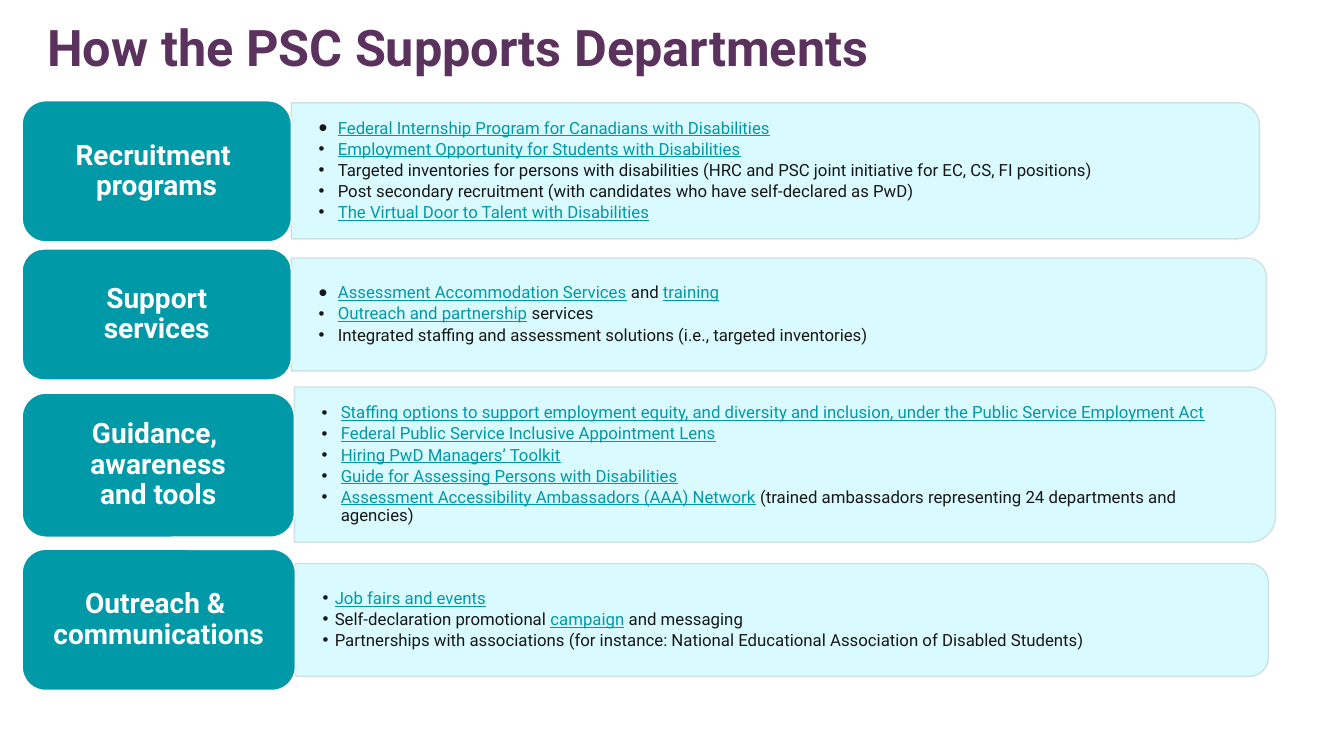
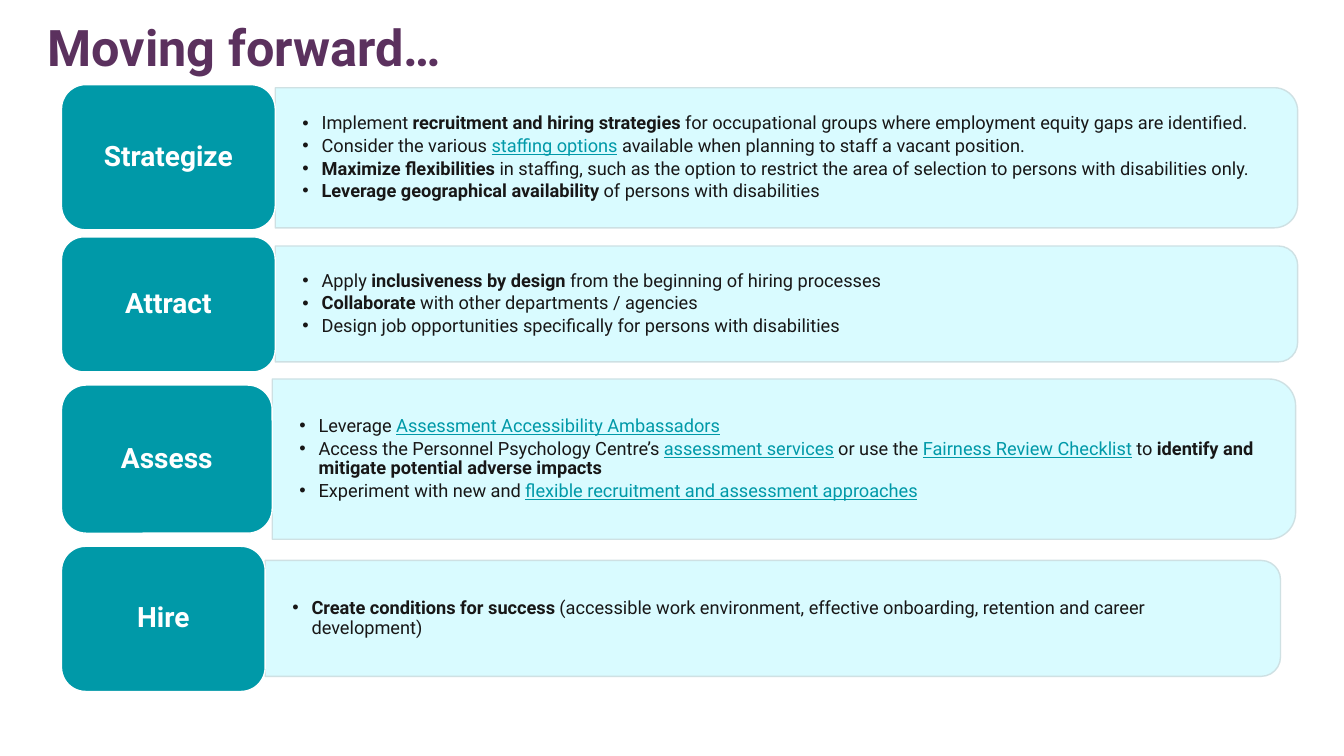
from dataclasses import dataclass
from typing import NamedTuple

from lxml import etree
from pptx import Presentation
from pptx.dml.color import RGBColor
from pptx.enum.shapes import MSO_SHAPE
from pptx.enum.text import MSO_ANCHOR, MSO_AUTO_SIZE, PP_ALIGN
from pptx.oxml.ns import qn
from pptx.util import Pt

PX = 9144  # EMU per px, 100 px to the inch
ROUND_RECT = MSO_SHAPE.ROUNDED_RECTANGLE
ROUND_TOP = MSO_SHAPE.ROUND_2_SAME_RECTANGLE
MIDDLE = MSO_ANCHOR.MIDDLE
CENTER, LEFT = PP_ALIGN.CENTER, PP_ALIGN.LEFT
NO_AUTOFIT = MSO_AUTO_SIZE.NONE
TITLE_ONLY = 5

FONT = "Roboto"
PURPLE, TEAL, PALE = "5B315E", "0099A8", "D5FBFF"
EDGE, INK, WHITE = "CCDEE1", "181717", "FFFFFF"
LINE_SPACING = 0.9
BULLET_GAP = Pt(2.1)


class Span(NamedTuple):
    text: str
    bold: bool = False
    link: bool = False


def bold(text):
    return Span(text, bold=True)


def link(text):
    return Span(text, link=True)


@dataclass
class Section:
    """One row: a card from the slide's card edge to split, a panel from split to right."""
    label: str
    card_top: int
    card_height: int
    split: int
    right: int
    panel_top: int
    panel_height: int
    bullets: list
    indent: int = 19
    big_first_bullet: bool = False


SUPPORT = [
    Section("Recruitment \vprograms", 100, 140, 289, 1249, 102, 135, [
        [link("Federal Internship Program for Canadians with Disabilities")],
        [link("Employment Opportunity for Students with Disabilities")],
        ["Targeted inventories for persons with disabilities "
         "(HRC and PSC joint initiative for EC, CS, FI positions)"],
        ["Post secondary recruitment (with candidates who have self-declared as PwD)"],
        [link("The Virtual Door to Talent with Disabilities")],
    ], big_first_bullet=True),
    Section("Support\vservices", 247, 130, 289, 1256, 256, 112, [
        [link("Assessment Accommodation Services"), " and ", link("training")],
        [link("Outreach and partnership"), " services"],
        ["Integrated staffing and assessment solutions (i.e., targeted inventories)"],
    ], big_first_bullet=True),
    Section("Guidance, \vawareness\vand tools", 390, 143, 292, 1265, 384, 154, [
        [link("Staffing options to support employment equity, and diversity and inclusion, "
              "under the Public Service Employment Act")],
        [link("Federal Public Service Inclusive Appointment Lens")],
        [link("Hiring PwD Managers’ Toolkit")],
        [link("Guide for Assessing Persons with Disabilities")],
        [link("Assessment Accessibility Ambassadors (AAA) Network"),
         " (trained ambassadors representing 24 departments and agencies)"],
    ]),
    Section("Outreach & \vcommunications", 545, 140, 293, 1258, 559, 112, [
        [link("Job fairs and events")],
        ["Self-declaration promotional ", link("campaign"), " and messaging"],
        ["Partnerships with associations "
         "(for instance: National Educational Association of Disabled Students)"],
    ], indent=12),
]

FORWARD = [
    Section("Strategize", 84, 144, 273, 1287, 87, 139, [
        ["Implement ", bold("recruitment and hiring strategies "),
         "for occupational groups where employment equity gaps are identified."],
        ["Consider the various ", link("staffing options"),
         " available when planning to staff a vacant position."],
        [bold("Maximize flexibilities "),
         "in staffing, such as the option to restrict the area of selection "
         "to persons with disabilities only."],
        [bold("Leverage geographical availability "), "of persons with disabilities"],
    ]),
    Section("Attract", 235, 134, 273, 1287, 244, 115, [
        ["Apply ", bold("inclusiveness by design "),
         "from the beginning of hiring processes"],
        [bold("Collaborate"), " with other departments / agencies"],
        ["Design job opportunities specifically for persons with disabilities"],
    ]),
    Section("Assess", 382, 147, 270, 1285, 376, 159, [
        ["Leverage ", link("Assessment Accessibility Ambassadors")],
        ["Access the Personnel Psychology Centre’s ", link("assessment services"),
         " or use the ", link("Fairness Review Checklist"), " to ",
         bold("identify and mitigate potential adverse impacts")],
        ["Experiment with new and ",
         link("flexible recruitment and assessment approaches")],
    ]),
    Section("Hire", 542, 144, 263, 1270, 556, 115, [
        [bold("Create conditions for success "),
         "(accessible work environment, effective onboarding, retention and "
         "career development)"],
    ]),
]


def px(*lengths):
    return [round(length * PX) for length in lengths]


def rgb(hex_color):
    return RGBColor.from_string(hex_color)


def style_run(run, size, color, is_bold=False):
    run.font.name = FONT
    run.font.size = Pt(size)
    run.font.bold = is_bold
    run.font.color.rgb = rgb(color)


def set_frame(frame, side, end):
    """Wrap and centre vertically, with side and end margins in px."""
    frame.word_wrap = True
    frame.auto_size = NO_AUTOFIT
    frame.vertical_anchor = MIDDLE
    frame.margin_left, frame.margin_right = px(side, side)
    frame.margin_top, frame.margin_bottom = px(end, end)


def fill_label(frame, text, size, color, alignment):
    frame.text = text
    paragraph = frame.paragraphs[0]
    paragraph.alignment = alignment
    paragraph.line_spacing = LINE_SPACING
    for run in paragraph.runs:
        style_run(run, size, color, True)


def add_title(slide, text):
    title = slide.shapes.title
    title.left, title.top, title.width, title.height = px(37, 4, 1150, 92)
    set_frame(title.text_frame, 10, 5)
    fill_label(title.text_frame, text, 36, PURPLE, LEFT)


def add_block(slide, preset, box, fill, edge):
    block = slide.shapes.add_shape(preset, *px(*box))
    block.shadow.inherit = False
    block.fill.solid()
    block.fill.fore_color.rgb = rgb(fill)
    block.line.color.rgb = rgb(edge)
    block.line.width = Pt(1)
    return block


def add_card(slide, left, section):
    box = (left, section.card_top, section.split - left, section.card_height)
    card = add_block(slide, ROUND_RECT, box, TEAL, WHITE)
    set_frame(card.text_frame, 8, 4)
    fill_label(card.text_frame, section.label, 20, WHITE, CENTER)


def add_panel(slide, section):
    """Draw the pale panel, its rounded top turned to face right."""
    width, height = section.right - section.split, section.panel_height
    shift = (width - height) / 2
    box = (section.split + shift, section.panel_top - shift, height, width)
    panel = add_block(slide, ROUND_TOP, box, PALE, EDGE)
    panel.rotation = 90
    for color in panel._element.spPr.iter(qn("a:srgbClr")):
        etree.SubElement(color, qn("a:alpha"), val="90000")


def set_bullet(paragraph, indent, size_percent):
    properties = paragraph._p.get_or_add_pPr()
    [hang] = px(indent)
    properties.set("marL", str(hang))
    properties.set("indent", str(-hang))
    color = etree.SubElement(properties, qn("a:buClr"))
    etree.SubElement(color, qn("a:srgbClr"), val=INK)
    etree.SubElement(properties, qn("a:buSzPct"), val=str(size_percent * 1000))
    etree.SubElement(properties, qn("a:buFont"), typeface="Arial")
    etree.SubElement(properties, qn("a:buChar"), char="•")


def add_bullets(slide, section, size):
    width = section.right - section.split - 6
    box = px(section.split, section.panel_top, width, section.panel_height)
    frame = slide.shapes.add_textbox(*box).text_frame
    set_frame(frame, 27, 14)
    for index, spans in enumerate(section.bullets):
        paragraph = frame.add_paragraph() if index else frame.paragraphs[0]
        paragraph.line_spacing = LINE_SPACING
        paragraph.space_after = BULLET_GAP
        is_big = section.big_first_bullet and index == 0
        set_bullet(paragraph, section.indent, 150 if is_big else 100)
        for item in spans:
            span = Span(item) if isinstance(item, str) else item
            run = paragraph.add_run()
            run.text = span.text
            style_run(run, size, TEAL if span.link else INK, span.bold)
            run.font.underline = span.link


def add_section_slide(deck, title, card_left, text_size, sections):
    slide = deck.slides.add_slide(deck.slide_layouts[TITLE_ONLY])
    add_title(slide, title)
    for section in sections:
        add_panel(slide, section)
        add_bullets(slide, section, text_size)
        add_card(slide, card_left, section)


def main():
    deck = Presentation()
    deck.slide_width, deck.slide_height = px(1333, 750)
    add_section_slide(deck, "How the PSC Supports Departments", 22, 12, SUPPORT)
    add_section_slide(deck, "Moving forward…", 61, 13, FORWARD)
    deck.save("out.pptx")


if __name__ == "__main__":
    main()
